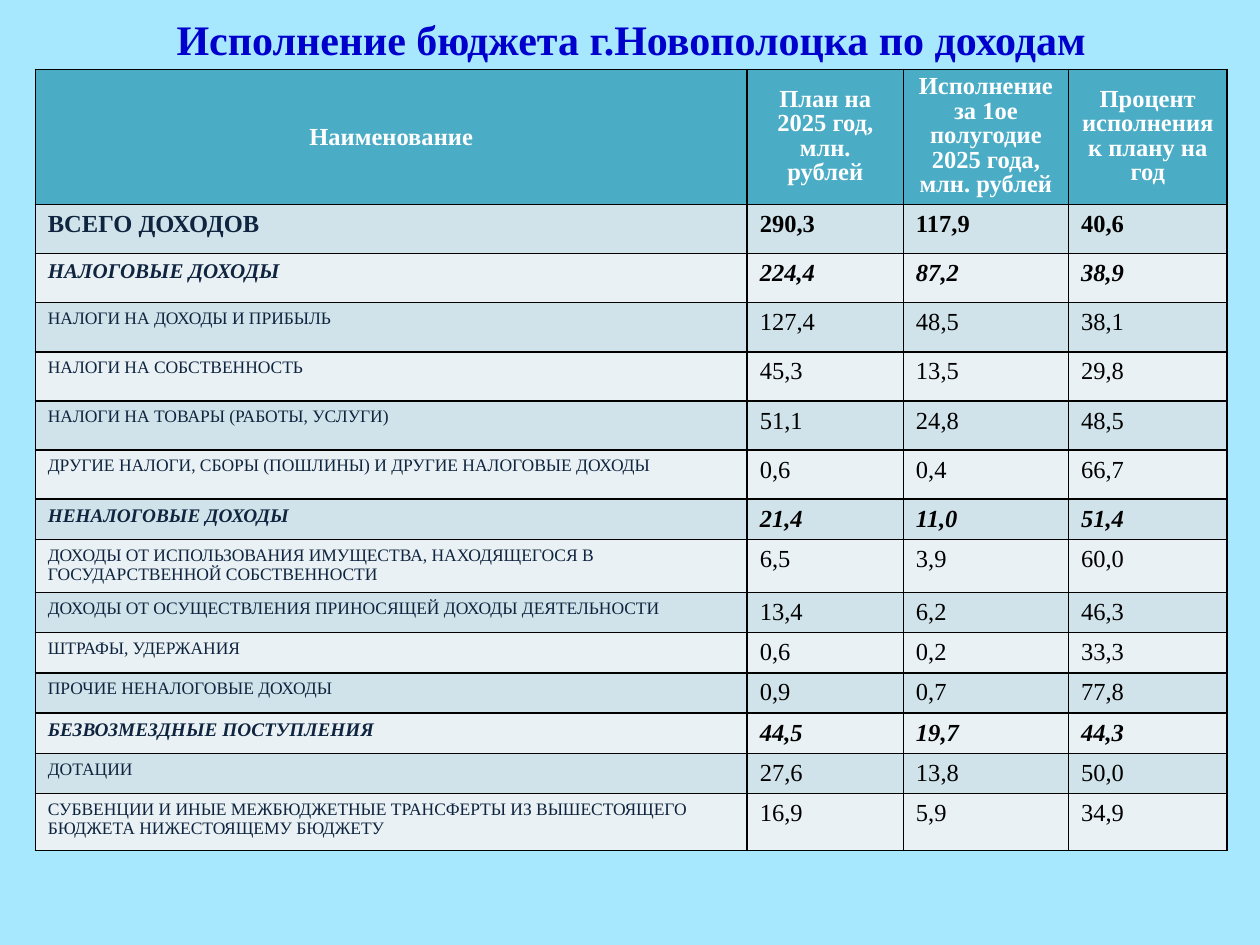
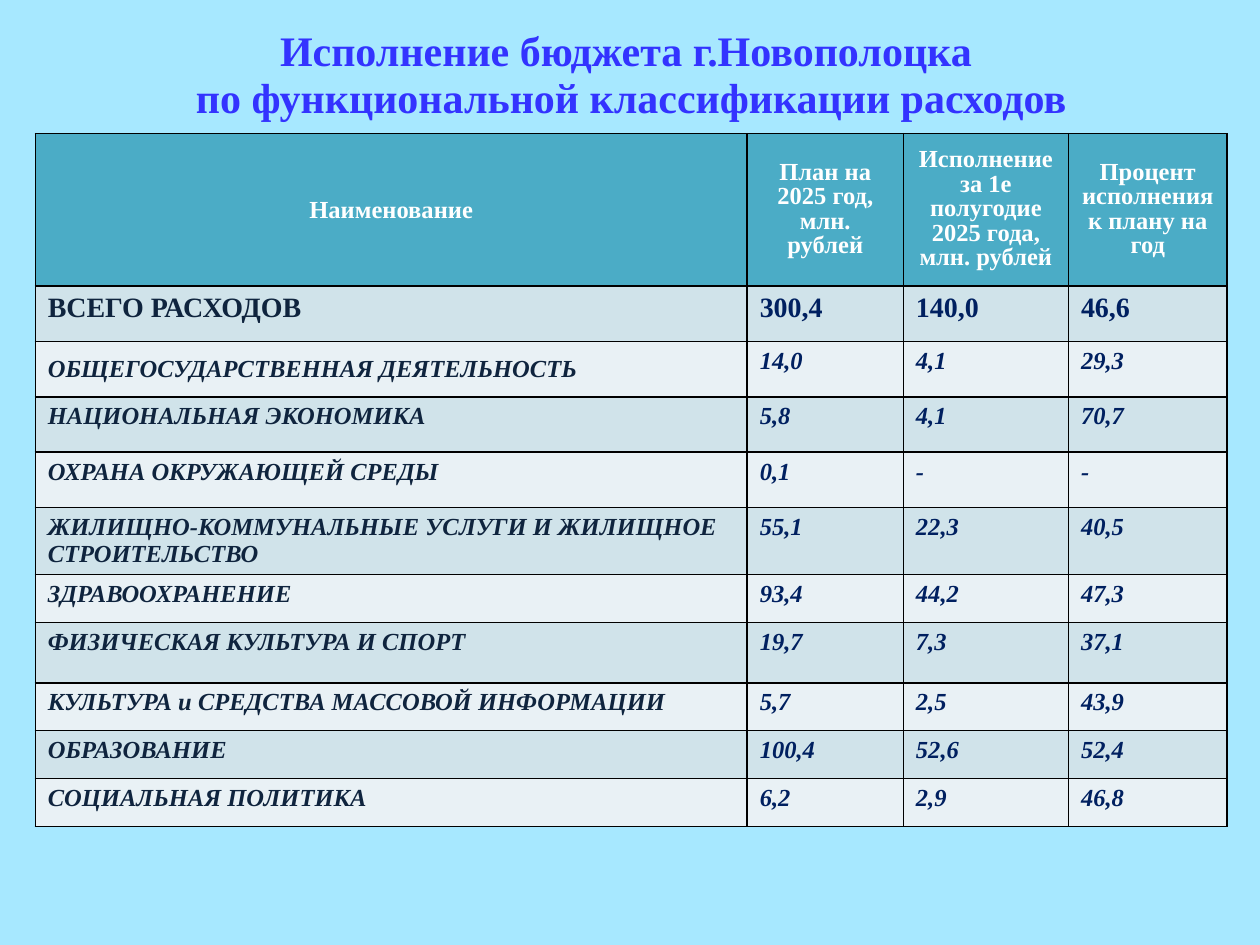
from collections import namedtuple
from copy import deepcopy

from lxml.etree import SubElement
from pptx import Presentation
from pptx.dml.color import RGBColor
from pptx.enum.text import MSO_ANCHOR, MSO_AUTO_SIZE, PP_ALIGN
from pptx.oxml.ns import qn
from pptx.util import Inches, Pt

SLIDE_WIDTH, SLIDE_HEIGHT = Inches(10), Inches(7.5)
GRID = SLIDE_WIDTH // 1000  # the slide is a grid of 1000 columns by 750 rows

SKY = RGBColor(0xA7, 0xE8, 0xFF)
TEAL = RGBColor(0x4B, 0xAC, 0xC6)
BANDS = RGBColor(0xD0, 0xE3, 0xEA), RGBColor(0xE9, 0xF1, 0xF5)
INCOME_BLUE = RGBColor(0x00, 0x00, 0xCC)
SPENDING_BLUE = RGBColor(0x33, 0x33, 0xFF)
INK = RGBColor(0x0F, 0x24, 0x3E)
NAVY = RGBColor(0x00, 0x20, 0x60)
BLACK = RGBColor(0, 0, 0)
WHITE = RGBColor(0xFF, 0xFF, 0xFF)

FONT = "Times New Roman"
TABLE_LEFT = 28
COLUMNS = 565, 124, 131, 126

Box = namedtuple("Box", "left top width height")
Level = namedtuple("Level", "label_size value_size bold italic")
Line = namedtuple("Line", "level height label values")

TOTAL = Level(14, 14, True, False)
TAX_GROUP = Level(12, 14, True, True)
GROUP = Level(11, 14, True, True)
ITEM = Level(10, 14, False, False)
SPENDING_TOTAL = Level(16, 16, True, False)
SECTION = Level(14, 14, True, True)

INCOME = [
    Line(TOTAL, 39, "ВСЕГО ДОХОДОВ", "290,3 117,9 40,6"),
    Line(TAX_GROUP, 39, "НАЛОГОВЫЕ ДОХОДЫ", "224,4 87,2 38,9"),
    Line(ITEM, 39, "НАЛОГИ НА ДОХОДЫ И ПРИБЫЛЬ", "127,4 48,5 38,1"),
    Line(ITEM, 39, "НАЛОГИ НА СОБСТВЕННОСТЬ", "45,3 13,5 29,8"),
    Line(ITEM, 39, "НАЛОГИ НА ТОВАРЫ (РАБОТЫ, УСЛУГИ)", "51,1 24,8 48,5"),
    Line(ITEM, 39, "ДРУГИЕ НАЛОГИ, СБОРЫ (ПОШЛИНЫ) И ДРУГИЕ НАЛОГОВЫЕ ДОХОДЫ",
         "0,6 0,4 66,7"),
    Line(GROUP, 32, "НЕНАЛОГОВЫЕ ДОХОДЫ", "21,4 11,0 51,4"),
    Line(ITEM, 42, "ДОХОДЫ ОТ ИСПОЛЬЗОВАНИЯ ИМУЩЕСТВА, НАХОДЯЩЕГОСЯ В "
         "ГОСУДАРСТВЕННОЙ СОБСТВЕННОСТИ", "6,5 3,9 60,0"),
    Line(ITEM, 32, "ДОХОДЫ ОТ ОСУЩЕСТВЛЕНИЯ ПРИНОСЯЩЕЙ ДОХОДЫ ДЕЯТЕЛЬНОСТИ",
         "13,4 6,2 46,3"),
    Line(ITEM, 32, "ШТРАФЫ, УДЕРЖАНИЯ", "0,6 0,2 33,3"),
    Line(ITEM, 32, "ПРОЧИЕ НЕНАЛОГОВЫЕ ДОХОДЫ", "0,9 0,7 77,8"),
    Line(GROUP, 32, "БЕЗВОЗМЕЗДНЫЕ ПОСТУПЛЕНИЯ", "44,5 19,7 44,3"),
    Line(ITEM, 32, "ДОТАЦИИ", "27,6 13,8 50,0"),
    Line(ITEM, 45, "СУБВЕНЦИИ И ИНЫЕ МЕЖБЮДЖЕТНЫЕ ТРАНСФЕРТЫ ИЗ ВЫШЕСТОЯЩЕГО "
         "БЮДЖЕТА НИЖЕСТОЯЩЕМУ БЮДЖЕТУ", "16,9 5,9 34,9"),
]

SPENDING = [
    Line(SPENDING_TOTAL, 44, "ВСЕГО РАСХОДОВ", "300,4 140,0 46,6"),
    Line(SECTION, 44, "ОБЩЕГОСУДАРСТВЕННАЯ ДЕЯТЕЛЬНОСТЬ", "14,0 4,1 29,3"),
    Line(SECTION, 44, "НАЦИОНАЛЬНАЯ ЭКОНОМИКА", "5,8 4,1 70,7"),
    Line(SECTION, 44, "ОХРАНА ОКРУЖАЮЩЕЙ СРЕДЫ", "0,1 - -"),
    Line(SECTION, 44, "ЖИЛИЩНО-КОММУНАЛЬНЫЕ УСЛУГИ И ЖИЛИЩНОЕ СТРОИТЕЛЬСТВО",
         "55,1 22,3 40,5"),
    Line(SECTION, 38, "ЗДРАВООХРАНЕНИЕ", "93,4 44,2 47,3"),
    Line(SECTION, 48, "ФИЗИЧЕСКАЯ КУЛЬТУРА И СПОРТ", "19,7 7,3 37,1"),
    Line(SECTION, 38, "КУЛЬТУРА и СРЕДСТВА МАССОВОЙ ИНФОРМАЦИИ", "5,7 2,5 43,9"),
    Line(SECTION, 38, "ОБРАЗОВАНИЕ", "100,4 52,6 52,4"),
    Line(SECTION, 38, "СОЦИАЛЬНАЯ ПОЛИТИКА", "6,2 2,9 46,8"),
]


def format_text(paragraph, size, color, bold=True, italic=False):
    for run in paragraph.runs:
        run.font.color.rgb = color
        formats = {"name": FONT, "size": Pt(size), "bold": bold, "italic": italic}
        for attribute, value in formats.items():
            setattr(run.font, attribute, value)


def add_borders(cell):
    properties = cell._tc.get_or_add_tcPr()
    for position, side in enumerate(("a:lnL", "a:lnR", "a:lnT", "a:lnB")):
        border = properties.makeelement(qn(side), {"w": str(Pt(1))})
        fill = SubElement(border, qn("a:solidFill"))
        SubElement(fill, qn("a:srgbClr"), val=str(BLACK))
        properties.insert(position, border)


def write_cell(cell, text, fill, size, color, bold=True, italic=False):
    cell.fill.solid()
    cell.fill.fore_color.rgb = fill
    add_borders(cell)
    cell.text = text
    paragraph = cell.text_frame.paragraphs[0]
    format_text(paragraph, size, color, bold, italic)
    return paragraph


def write_heading(slide, box, text, color, spacing):
    heading = slide.shapes.title
    for side, cells in box._asdict().items():
        setattr(heading, side, cells * GRID)
    frame = heading.text_frame
    frame.text = text
    frame.auto_size = MSO_AUTO_SIZE.NONE
    frame.vertical_anchor = MSO_ANCHOR.MIDDLE
    paragraph = frame.paragraphs[0]
    paragraph.alignment = PP_ALIGN.CENTER
    paragraph.line_spacing = Pt(spacing)
    format_text(paragraph, 24, color)
    for line_break in paragraph._p.findall(qn("a:br")):
        line_break.append(deepcopy(paragraph.runs[0]._r.rPr))


def write_header(table, period):
    captions = ("Наименование", "План на 2025 год, млн. рублей",
                f"Исполнение за {period} полугодие 2025 года, млн. рублей",
                "Процент исполнения к плану на год")
    for column, caption in enumerate(captions):
        cell = table.cell(0, column)
        cell.vertical_anchor = MSO_ANCHOR.MIDDLE
        paragraph = write_cell(cell, caption, TEAL, 14, WHITE)
        paragraph.alignment = PP_ALIGN.CENTER
        if column:
            paragraph.line_spacing = Pt(14)


def add_budget_table(slide, top, header_height, period, lines, value_color):
    heights = [header_height] + [line.height for line in lines]
    box = Box(TABLE_LEFT, top, sum(COLUMNS), sum(heights))
    table = slide.shapes.add_table(
        len(heights), len(COLUMNS), *(cells * GRID for cells in box)).table
    for column, width in zip(table.columns, COLUMNS):
        column.width = width * GRID
    for row, height in zip(table.rows, heights):
        row.height = height * GRID

    write_header(table, period)
    for index, line in enumerate(lines):
        level, fill = line.level, BANDS[index % 2]
        label, *values = table.rows[index + 1].cells
        write_cell(label, line.label, fill, level.label_size, INK,
                   level.bold, level.italic)
        for cell, value in zip(values, line.values.split()):
            write_cell(cell, value, fill, level.value_size, value_color,
                       level.bold, level.italic)
    return table


def add_income_slide(prs, layout):
    slide = prs.slides.add_slide(layout)
    write_heading(slide, Box(51, 4, 900, 32),
                  "Исполнение бюджета г.Новополоцка по доходам", INCOME_BLUE, 44)
    add_budget_table(slide, 55, 104, "1ое", INCOME, BLACK)


def add_spending_slide(prs, layout):
    slide = prs.slides.add_slide(layout)
    write_heading(slide, Box(51, 13, 900, 93),
                  "Исполнение бюджета г.Новополоцка \v"
                  "по функциональной классификации расходов", SPENDING_BLUE, 27)
    table = add_budget_table(slide, 106, 121, "1е", SPENDING, NAVY)
    table.cell(2, 0).vertical_anchor = MSO_ANCHOR.MIDDLE


def main():
    prs = Presentation()
    prs.slide_width, prs.slide_height = SLIDE_WIDTH, SLIDE_HEIGHT
    backdrop = prs.slide_master.background.fill
    backdrop.solid()
    backdrop.fore_color.rgb = SKY
    title_only = prs.slide_layouts.get_by_name("Title Only")
    add_income_slide(prs, title_only)
    add_spending_slide(prs, title_only)
    prs.save("out.pptx")


if __name__ == "__main__":
    main()
